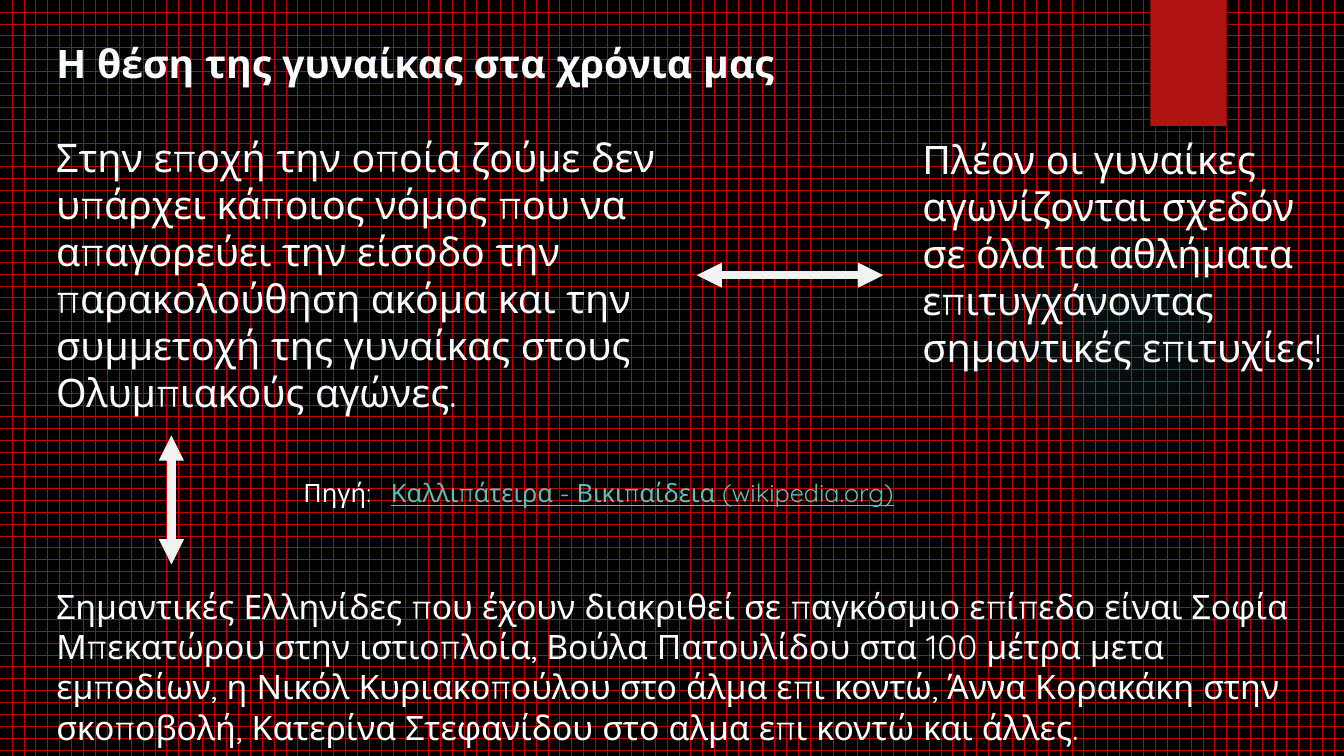
import pptx
import pptx.dml.color
import pptx.enum.dml
import pptx.enum.shapes
import pptx.enum.text
import pptx.oxml
import pptx.oxml.ns
import pptx.util

COLORS = {
    "black": "000000",
    "brick": "C00000",
    "tab": "B01513",
    "glow": "50B9C1",
    "text": "FFFFFF",
    "arrow": "F2F2F2",
    "link": "58C1BA",
}
FONT = "Quicksand"
NS = pptx.oxml.ns.nsdecls("a")
In = pptx.util.Inches
SHAPE = pptx.enum.shapes.MSO_SHAPE
LEFT = 0.46  # shared left edge of the main text


def rgb(name):
    return pptx.dml.color.RGBColor.from_string(COLORS[name])


def add_plain_shape(s, kind, box):
    sp = s.shapes.add_shape(kind, *map(In, box))
    sp.shadow.inherit = False
    sp.line.fill.background()
    return sp


def add_text(s, box, text, size, color="text", bold=None, underline=None, inset=0.1):
    tb = s.shapes.add_textbox(*map(In, box))
    tf = tb.text_frame
    tf.word_wrap = True
    tf.auto_size = pptx.enum.text.MSO_AUTO_SIZE.SHAPE_TO_FIT_TEXT
    tf.margin_left = In(inset)
    r = tf.paragraphs[0].add_run()
    r.text = text
    r.font.name = FONT
    r.font.size = pptx.util.Pt(size)
    r.font.bold = bold
    r.font.underline = underline
    r.font.color.rgb = rgb(color)


def add_double_arrow(s, x, y, dx, dy):
    c = s.shapes.add_connector(pptx.enum.shapes.MSO_CONNECTOR.STRAIGHT,
                               In(x), In(y), In(x + dx), In(y + dy))
    c.line.width = pptx.util.Pt(6)
    c.line.color.rgb = rgb("arrow")
    ln = c.line._get_or_add_ln()
    for end in ("headEnd", "tailEnd"):
        ln.append(pptx.oxml.parse_xml(f'<a:{end} {NS} type="triangle"/>'))
    c._element.spPr.append(pptx.oxml.parse_xml(f"<a:effectLst {NS}/>"))


def add_backdrop(s):
    # Brick pattern
    fill = s.background.fill
    fill.patterned()
    fill.pattern = pptx.enum.dml.MSO_PATTERN.HORIZONTAL_BRICK
    fill.fore_color.rgb = rgb("brick")
    fill.back_color.rgb = rgb("black")

    # Faint round glow
    glow = add_plain_shape(s, SHAPE.OVAL, (9.41, 1.83, 3.08, 3.08))
    stops = "".join(
        f'<a:gs pos="{pos * 1000}"><a:srgbClr val="{COLORS["glow"]}">'
        f'<a:alpha val="{alpha * 1000}"/></a:srgbClr></a:gs>'
        for pos, alpha in ((0, 7), (36, 6), (69, 0)))
    glow.fill.gradient()
    grad = glow._element.spPr.find(pptx.oxml.ns.qn("a:gradFill"))
    grad.getparent().replace(grad, pptx.oxml.parse_xml(
        f'<a:gradFill {NS} rotWithShape="1"><a:gsLst>{stops}</a:gsLst>'
        '<a:path path="circle"><a:fillToRect l="50000" t="50000" r="50000" b="50000"/>'
        '</a:path></a:gradFill>'))

    # Red tab with a soft shadow below
    tab = add_plain_shape(s, SHAPE.RECTANGLE, (11.41, 0, 0.75, 1.25))
    tab.fill.solid()
    tab.fill.fore_color.rgb = rgb("tab")
    effects = tab._element.spPr.find(pptx.oxml.ns.qn("a:effectLst"))
    effects.append(pptx.oxml.parse_xml(
        f'<a:outerShdw {NS} blurRad="38100" dist="25400" dir="5400000" rotWithShape="0">'
        f'<a:srgbClr val="{COLORS["black"]}"><a:alpha val="45000"/></a:srgbClr>'
        '</a:outerShdw>'))


def add_statements(s):
    add_text(s, (LEFT, 0.34, 10.92, 0.57), "Η θέση της γυναίκας στα χρόνια μας", 28, bold=True)
    add_text(s, (LEFT, 1.27, 7.06, 2.93),
             "Στην εποχή την οποία ζούμε δεν υπάρχει κάποιος νόμος που να απαγορεύει "
             "την είσοδο την παρακολούθηση ακόμα και την συμμετοχή της γυναίκας στους "
             "Ολυμπιακούς αγώνες.", 28)
    add_double_arrow(s, 6.91, 2.73, 1.85, 0)
    add_text(s, (9.05, 1.29, 4.17, 2.46),
             "Πλέον οι γυναίκες αγωνίζονται σχεδόν σε όλα τα αθλήματα επιτυγχάνοντας "
             "σημαντικές επιτυχίες!", 28)
    add_double_arrow(s, 1.7, 4.32, 0, 1.28)
    add_text(s, (LEFT, 5.76, 12.59, 1.72),
             "Σημαντικές Ελληνίδες που έχουν διακριθεί σε παγκόσμιο επίπεδο είναι Σοφία "
             "Μπεκατώρου στην ιστιοπλοία, Βούλα Πατουλίδου στα 100 μέτρα μετα εμποδίων, "
             "η Νικόλ Κυριακοπούλου στο άλμα επι κοντώ, Άννα Κορακάκη στην σκοποβολή, "
             "Κατερίνα Στεφανίδου στο αλμα επι κοντώ και άλλες.", 24)


def add_source(s, top):
    add_text(s, (2.41, top, 2.33, 0.4), "Πηγή:", 18, inset=0.6)
    add_text(s, (3.78, top, 6.67, 0.4), "Καλλιπάτειρα - Βικιπαίδεια (wikipedia.org)",
             18, "link", underline=True)


def main():
    prs = pptx.Presentation()
    prs.slide_width, prs.slide_height = In(13.33), In(7.5)
    s = prs.slides.add_slide(prs.slide_layouts[6])
    add_backdrop(s)
    add_statements(s)
    add_source(s, 4.69)
    prs.save("out.pptx")


if __name__ == "__main__":
    main()
